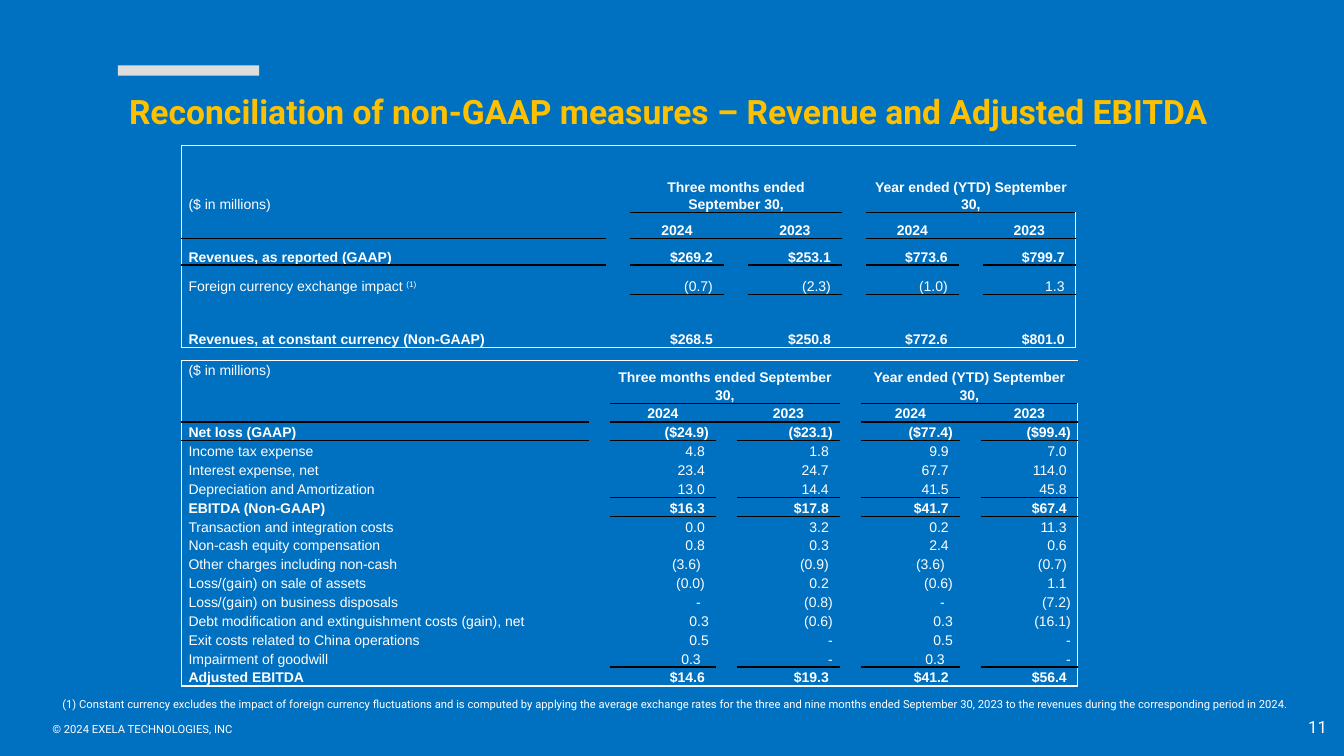
from lxml import etree
from pptx import Presentation
from pptx.dml.color import RGBColor
from pptx.enum.shapes import MSO_SHAPE
from pptx.enum.text import MSO_ANCHOR, MSO_AUTO_SIZE, PP_ALIGN
from pptx.oxml.ns import qn
from pptx.util import Inches, Pt

RECT = MSO_SHAPE.RECTANGLE
TOP, MID, LOW = MSO_ANCHOR.TOP, MSO_ANCHOR.MIDDLE, MSO_ANCHOR.BOTTOM
LEFT, MIDST, RIGHT = PP_ALIGN.LEFT, PP_ALIGN.CENTER, PP_ALIGN.RIGHT
BLUE = RGBColor(0x00, 0x70, 0xC0)
GOLD = RGBColor(0xFF, 0xC0, 0x00)
GREY = RGBColor(0xDD, 0xDD, 0xDD)
WHITE = RGBColor(0xFF, 0xFF, 0xFF)
BLACK = RGBColor(0x00, 0x00, 0x00)
PLAIN = "{2D5ABB26-0587-4C30-8999-92F81FD0307C}"
INSET, SPACE = 0.07, 0.04
SPANS = ((2, 4), (6, 8))
SLOTS = (2, 4, 6, 8)


def write(para, text, size, face, tint=WHITE, bold=False, align=LEFT):
    para.alignment = align
    run = para.add_run()
    run.text = text
    form = {"size": Pt(size), "name": face, "bold": bold}
    for key, value in form.items():
        setattr(run.font, key, value)
    run.font.color.rgb = tint
    return run


def edge(cell, side, tint):
    props = cell._tc.get_or_add_tcPr()
    line = etree.SubElement(props, qn("a:ln" + side), w=str(Pt(1)))
    fill = etree.SubElement(line, qn("a:solidFill"))
    etree.SubElement(fill, qn("a:srgbClr"), val=str(tint))


deck = Presentation()
deck.slide_width, deck.slide_height = Inches(13.33), Inches(7.5)
slide = deck.slides.add_slide(deck.slide_layouts[5])
slide.background.fill.solid()
slide.background.fill.fore_color.rgb = BLUE

bar = slide.shapes.add_shape(RECT, Inches(1.17), Inches(0.65), Inches(1.4), Inches(0.1))
bar.shadow.inherit = False
bar.fill.solid()
bar.fill.fore_color.rgb = GREY
bar.line.fill.background()

title = slide.shapes.title
title.left, title.top = Inches(1.18), Inches(0.4)
title.width, title.height = Inches(11.63), Inches(1.45)
frame = title.text_frame
frame.auto_size = MSO_AUTO_SIZE.NONE
frame.vertical_anchor = MID
frame.paragraphs[0].line_spacing = 0.9
write(frame.paragraphs[0], "Reconciliation of non-GAAP measures – Revenue and Adjusted EBITDA",
      24, "Roboto", GOLD, True)

NOTES = [
    (0.42, 7.12, 4.05, 0.24, "© 2024 EXELA TECHNOLOGIES, INC", 8, LEFT, TOP),
    (10.26, 7.01, 3, 0.4, "11", 12, RIGHT, MID),
    (0.52, 6.87, 12.8, 0.24,
     "(1) Constant currency excludes the impact of foreign currency fluctuations and is computed "
     "by applying the average exchange rates for the three and nine months ended September 30, "
     "2023 to the revenues during the corresponding period in 2024.", 8, LEFT, TOP),
]
for x, y, w, h, text, size, align, anchor in NOTES:
    frame = slide.shapes.add_textbox(Inches(x), Inches(y), Inches(w), Inches(h)).text_frame
    frame.word_wrap = True
    frame.vertical_anchor = anchor
    write(frame.paragraphs[0], text, size, "Roboto", align=align)

YEARS = ("", "2024 2023 2024 2023", "0000")
LOSS = [
    YEARS,
    ("Net loss (GAAP)", "($24.9) ($23.1) ($77.4) ($99.4)", "0000"),
    ("Income tax expense", "4.8 1.8 9.9 7.0", "1111"),
    ("Interest expense, net", "23.4 24.7 67.7 114.0", "1111"),
    ("Depreciation and Amortization", "13.0 14.4 41.5 45.8", "1111"),
    ("EBITDA (Non-GAAP)", "$16.3 $17.8 $41.7 $67.4", "1111"),
    ("Transaction and integration costs", "0.0 3.2 0.2 11.3", "1111"),
    ("Non-cash equity compensation", "0.8 0.3 2.4 0.6", "1111"),
    ("Other charges including non-cash", "(3.6) (0.9) (3.6) (0.7)", "2121"),
    ("Loss/(gain) on sale of assets", "(0.0) 0.2 (0.6) 1.1", "1101"),
    ("Loss/(gain) on business disposals", "- (0.8) - (7.2)", "2020"),
    ("Debt modification and extinguishment costs (gain), net", "0.3 (0.6) 0.3 (16.1)", "0000"),
    ("Exit costs related to China operations", "0.5 - 0.5 -", "0000"),
    ("Impairment of goodwill", "0.3 - 0.3 -", "2020"),
    ("Adjusted EBITDA", "$14.6 $19.3 $41.2 $56.4", "1111"),
]
SALES = [
    YEARS,
    ("Revenues, as reported (GAAP)", "$269.2 $253.1 $773.6 $799.7", "1111"),
    ("Foreign currency exchange impact ", "(0.7) (2.3) (1.0) 1.3", "1111"),
    ("Revenues, at constant currency (Non-GAAP)", "$268.5 $250.8 $772.6 $801.0", "1111"),
]
GRIDS = [
    (3.58, LOSS, (4.04, 0.21, 1.05, 0.21, 1.02, 0.21, 0.98, 0.21, 0.96),
     [0.42] + [0.18] * 15, (5, 14), TOP),
    (1.44, SALES, (4.21, 0.24, 0.93, 0.24, 0.93, 0.24, 0.92, 0.24, 0.92),
     [0.67, 0.26, 0.26, 0.29, 0.53], (3,), LOW),
]
for y, data, wides, highs, sums, anchor in GRIDS:
    shape = slide.shapes.add_table(len(highs), len(wides), Inches(1.8), Inches(y),
                                   Inches(sum(wides)), Inches(sum(highs)))
    grid = shape.table
    grid.first_row = grid.horz_banding = False
    grid._tbl.tblPr.find(qn("a:tableStyleId")).text = PLAIN
    for col, wide in zip(grid.columns, wides):
        col.width = Inches(wide)
    for row, high in zip(grid.rows, highs):
        row.height = Inches(high)

    texts = {(0, 0): "($ in millions)", (0, 2): "Three months ended September 30,",
             (0, 6): "Year ended (YTD) September 30,"}
    pads = {}
    for r, (label, values, gaps) in enumerate(data, 1):
        texts[r, 0] = label
        for c, value, gap in zip(SLOTS, values.split(), gaps):
            texts[r, c] = value
            pads[r, c] = int(gap)
    rules = {0: (2, 3, 4, 6, 7, 8), 1: (0,) + SLOTS}
    rules.update((r, SLOTS) for r in sums)
    last = len(highs) - 1

    for r in range(len(highs)):
        strong = r < 2 or "$" in texts[r, 2]
        for c in range(len(wides)):
            cell = grid.cell(r, c)
            cell.margin_top = cell.margin_bottom = 0
            cell.margin_left = Inches(INSET)
            cell.margin_right = Inches(INSET + SPACE * pads.get((r, c), 0))
            cell.vertical_anchor = anchor if (r, c) == (0, 0) else LOW
            if c == 0:
                edge(cell, "L", WHITE)
            if c == 8:
                edge(cell, "R", WHITE)
            if r == 0 or c in rules.get(r - 1, ()):
                edge(cell, "T", BLACK if r else WHITE)
            if r == last or c in rules.get(r, ()):
                edge(cell, "B", WHITE if r == last else BLACK)
            cell.fill.background()

            para = cell.text_frame.paragraphs[0]
            para.line_spacing = 1.12
            text = texts.get((r, c), "")
            if not text:
                etree.SubElement(para._p, qn("a:endParaRPr"), sz="1000")
                continue
            align = LEFT if c == 0 else MIDST if r < 2 else RIGHT
            write(para, text, 10, "Arial", bold=strong and (r, c) != (0, 0), align=align)
            if text.startswith("Foreign"):
                mark = write(para, "(1)", 10, "Arial")
                mark.font._element.set("baseline", "30000")
    for start, end in SPANS:
        grid.cell(0, start).merge(grid.cell(0, end))

deck.save("out.pptx")
